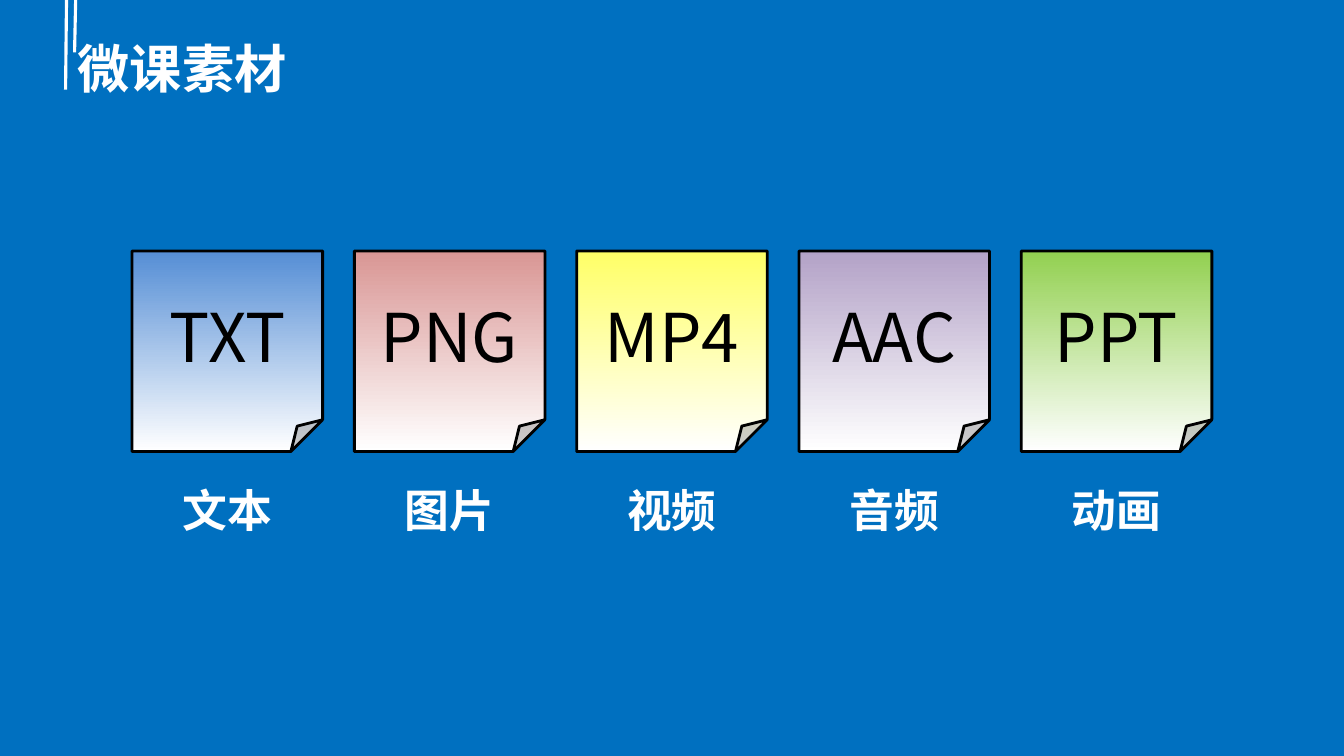
from dataclasses import dataclass

import lxml.etree
import pptx
import pptx.dml.color
import pptx.enum.shapes
import pptx.enum.text
import pptx.oxml.ns
import pptx.shapes.base
import pptx.shapes.connector
import pptx.shapes.group
import pptx.slide
import pptx.text.text
import pptx.util


@dataclass(frozen=True)
class Theme:
    font: str = "Noto Sans CJK SC"
    back: str = "0070C0"
    light: str = "FFFFFF"
    dark: str = "000000"
    title: float = 37.3
    code: float = 48
    label: float = 32
    rule: float = 2.25
    edge: float = 2


@dataclass(frozen=True)
class Box:
    """A frame in percent of the slide's width and height."""
    left: float
    top: float
    width: float
    height: float

    def emu(self) -> tuple[int, int, int, int]:
        return (across(self.left), down(self.top),
                across(self.width), down(self.height))


@dataclass(frozen=True)
class Rule:
    """A line falling from the top edge, in percent of the slide."""
    start: float
    end: float
    depth: float


@dataclass(frozen=True)
class Media:
    code: str
    label: str
    color: str


THEME = Theme()
WIDTH = pptx.util.Inches(13.333)
HEIGHT = pptx.util.Inches(7.5)

TITLE = Box(5.03, 4, 90, 9.87)
CARD = Box(9.83, 33.2, 14.18, 26.53)
LABEL = Box(CARD.left + (CARD.width - 8.25) / 2, 63.2, 8.25, 8.53)
PITCH = 16.54

RULES = [Rule(4.95, 4.88, 11.87), Rule(5.63, 5.55, 6.93)]
MEDIA = [
    Media("TXT", "文本", "558ED5"),
    Media("PNG", "图片", "D99694"),
    Media("MP4", "视频", "FFFF66"),
    Media("AAC", "音频", "B3A2C7"),
    Media("PPT", "动画", "92D050"),
]


def across(share: float) -> int:
    return round(WIDTH * share / 100)


def down(share: float) -> int:
    return round(HEIGHT * share / 100)


def rgb(code: str) -> pptx.dml.color.RGBColor:
    return pptx.dml.color.RGBColor.from_string(code)


def shift(box: Box, index: int) -> Box:
    """Move a box to the given column of cards."""
    return Box(box.left + index * PITCH, box.top, box.width, box.height)


def write(frame: pptx.text.text.TextFrame, text: str, *, size: float,
          color: str, bold: bool = False, center: bool = True,
          middle: bool = True) -> None:
    align = pptx.enum.text.PP_ALIGN
    anchor = pptx.enum.text.MSO_ANCHOR
    frame.vertical_anchor = anchor.MIDDLE if middle else anchor.TOP
    para = frame.paragraphs[0]
    para.alignment = align.CENTER if center else align.LEFT
    run = para.add_run()
    run.text = text
    run.font.size = pptx.util.Pt(size)
    run.font.bold = bold
    run.font.color.rgb = rgb(color)
    run.font.name = THEME.font
    east = lxml.etree.SubElement(run.font._element, pptx.oxml.ns.qn("a:ea"))
    east.set("typeface", THEME.font)


def add_rule(slide: pptx.slide.Slide, rule: Rule) -> None:
    line = slide.shapes.add_connector(
        pptx.enum.shapes.MSO_CONNECTOR.STRAIGHT,
        across(rule.start), 0, across(rule.end), down(rule.depth))
    line.line.color.rgb = rgb(THEME.light)
    line.line.width = pptx.util.Pt(THEME.rule)
    lxml.etree.SubElement(line._element.spPr, pptx.oxml.ns.qn("a:effectLst"))


def add_title(slide: pptx.slide.Slide, text: str) -> None:
    title = slide.shapes.title
    title.left, title.top, title.width, title.height = TITLE.emu()
    title.text_frame.auto_size = pptx.enum.text.MSO_AUTO_SIZE.NONE
    write(title.text_frame, text, size=THEME.title, color=THEME.light,
          bold=True, center=False)


def add_card(group: pptx.shapes.group.GroupShape, media: Media,
             index: int) -> None:
    card = group.shapes.add_shape(
        pptx.enum.shapes.MSO_SHAPE.FOLDED_CORNER, *shift(CARD, index).emu())
    card.shadow.inherit = False
    card.fill.gradient()
    card.fill.gradient_angle = 270
    for stop, color in zip(card.fill.gradient_stops,
                           (media.color, THEME.light)):
        stop.color.rgb = rgb(color)
    card.line.color.rgb = rgb(THEME.dark)
    card.line.width = pptx.util.Pt(THEME.edge)
    write(card.text_frame, media.code, size=THEME.code, color=THEME.dark)


def add_label(group: pptx.shapes.group.GroupShape, media: Media,
              index: int) -> None:
    label = group.shapes.add_textbox(*shift(LABEL, index).emu())
    label.text_frame.word_wrap = False
    label.text_frame.auto_size = pptx.enum.text.MSO_AUTO_SIZE.SHAPE_TO_FIT_TEXT
    write(label.text_frame, media.label, size=THEME.label, color=THEME.light,
          bold=True, middle=False)


def main() -> None:
    deck = pptx.Presentation()
    deck.slide_width, deck.slide_height = WIDTH, HEIGHT
    slide = deck.slides.add_slide(deck.slide_layouts.get_by_name("Title Only"))
    slide.background.fill.solid()
    slide.background.fill.fore_color.rgb = rgb(THEME.back)
    for rule in RULES:
        add_rule(slide, rule)
    add_title(slide, "微课素材")
    group = slide.shapes.add_group_shape()
    for index, media in enumerate(MEDIA):
        add_card(group, media, index)
        add_label(group, media, index)
    deck.save("out.pptx")


if __name__ == "__main__":
    main()
